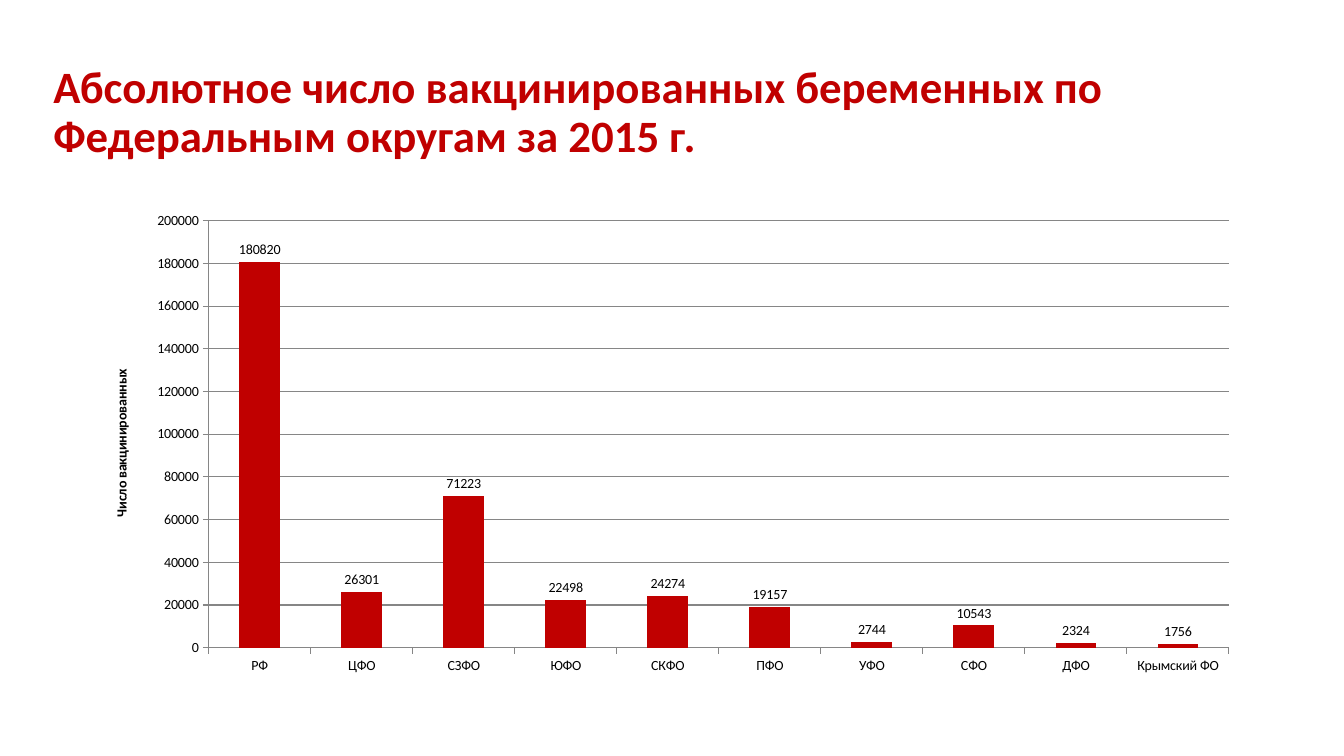
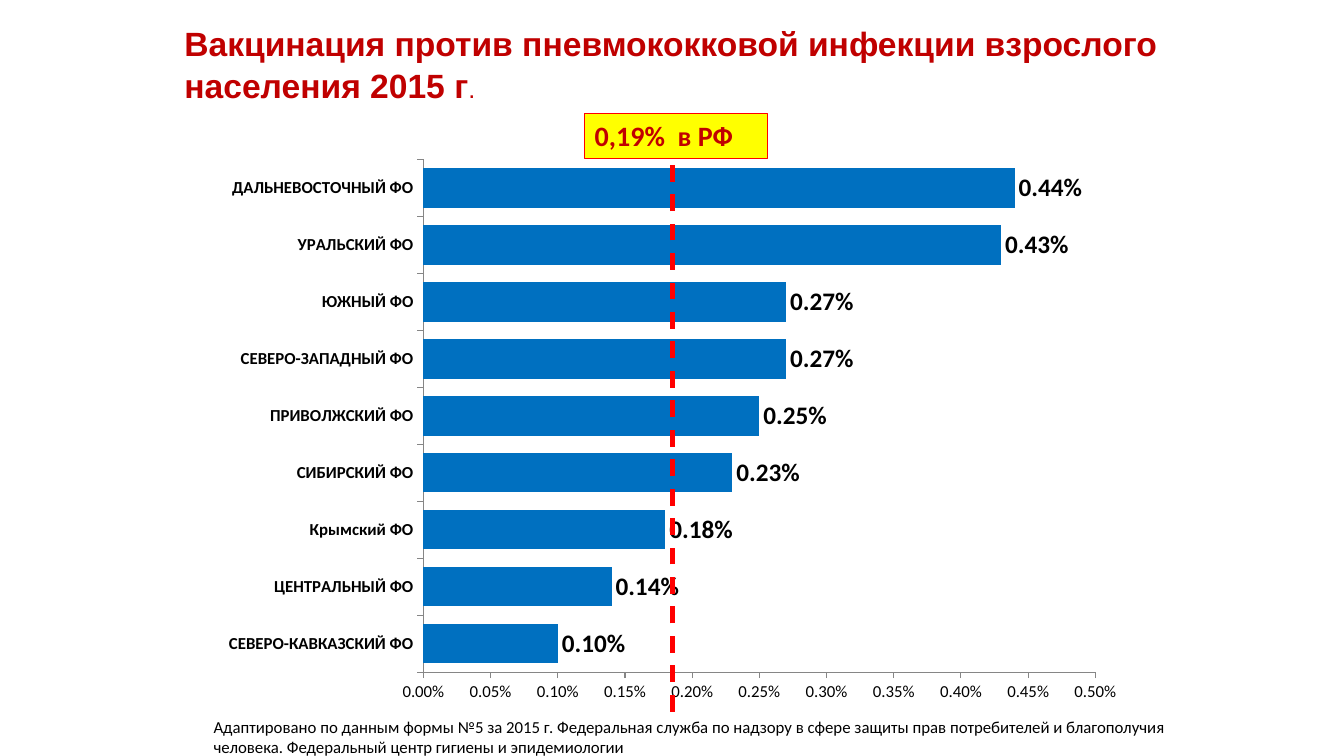
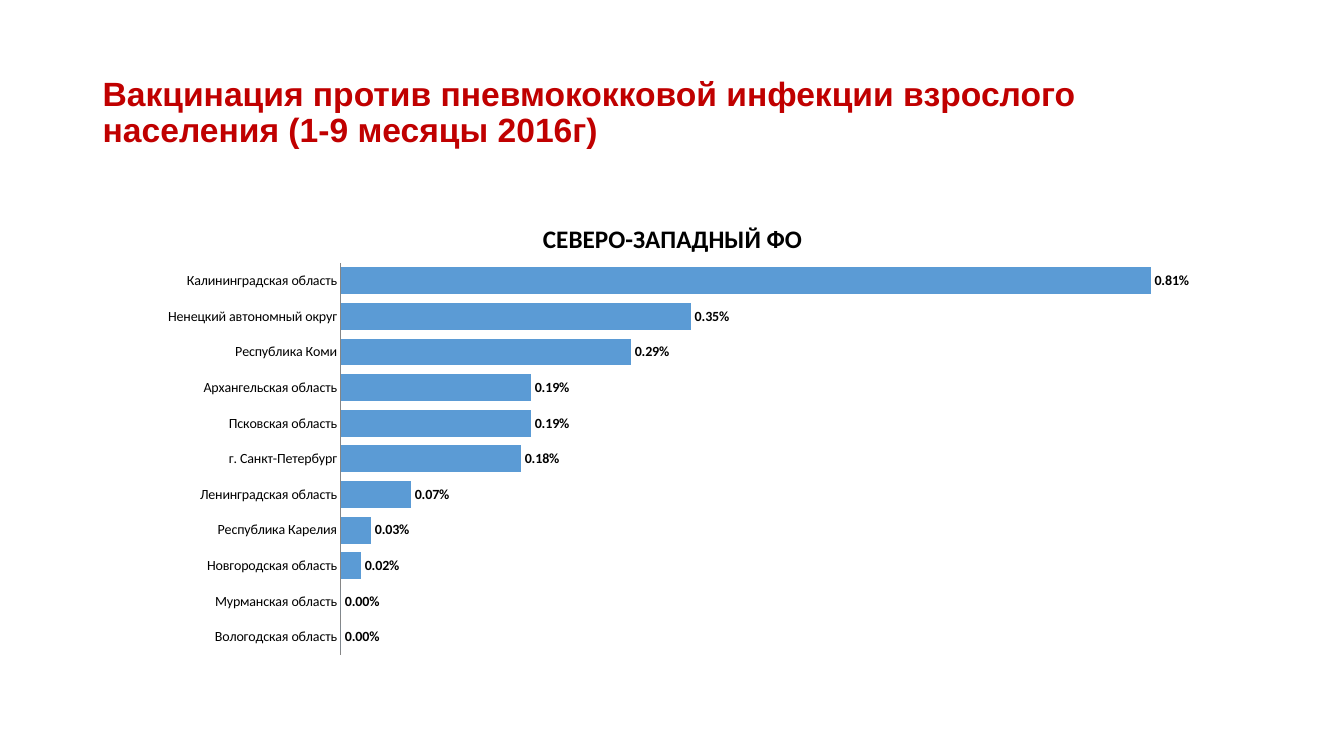
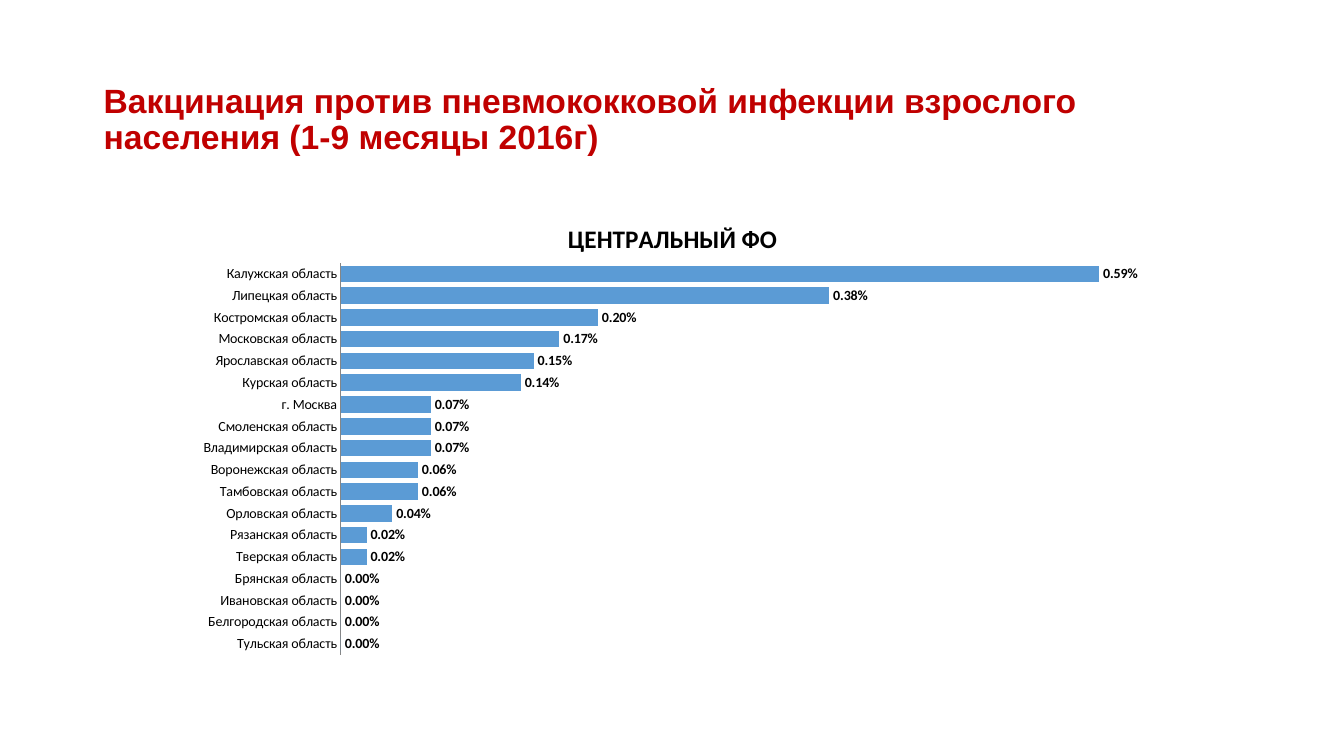
import dataclasses

import lxml.etree
import pptx
import pptx.chart.data
import pptx.dml.color
import pptx.enum.chart
import pptx.enum.dml
import pptx.enum.shapes
import pptx.enum.text
import pptx.oxml
import pptx.oxml.ns
import pptx.util

PX = 9144


@dataclasses.dataclass(frozen=True)
class Theme:
    red: str = "C00000"
    signal: str = "FF0000"
    yellow: str = "FFFF00"
    blue: str = "0070C0"
    sky: str = "5B9BD5"
    black: str = "000000"
    axis: str = "868686"
    body_font: str = "Calibri"
    title_font: str = "Arial"
    title_large: int = 32
    title_size: int = 24
    callout_size: int = 20
    heading_size: int = 18
    note_size: int = 12
    chart_size: int = 10


THEME = Theme()
PERCENT = "0.00%"


@dataclasses.dataclass(frozen=True)
class ChartStyle:
    color: str
    gap: int
    top_value: float
    step: float
    plot: tuple
    kind: object = pptx.enum.chart.XL_CHART_TYPE.BAR_CLUSTERED
    overlap: int = 0
    number_format: str = PERCENT
    size: int = THEME.chart_size
    label_size: int = THEME.chart_size
    bold_labels: bool = True
    bold_categories: bool = False
    show_values_axis: bool = True
    gridlines: bool = False
    title: str = ""
    axis_title: str = ""


def px(*lengths):
    return [pptx.util.Emu(length * PX) for length in lengths]


def rgb(color):
    return pptx.dml.color.RGBColor.from_string(color)


def set_font(font, size, color=THEME.black, name=THEME.body_font, bold=False):
    font.size = pptx.util.Pt(size)
    font.color.rgb = rgb(color)
    font.name = name
    font.bold = bold


def add_span(para, text, size, **style):
    span = para.add_run()
    span.text = text
    set_font(span.font, size, **style)


def add_text_box(page, area):
    box = page.shapes.add_textbox(*px(*area))
    box.text_frame.word_wrap = True
    return box


def add_title(page, area, text, size=THEME.title_size, font=THEME.title_font, spacing=0.9):
    box = add_text_box(page, area)
    box.text_frame.vertical_anchor = pptx.enum.text.MSO_ANCHOR.MIDDLE
    para = box.text_frame.paragraphs[0]
    para.line_spacing = spacing
    add_span(para, text, size, color=THEME.red, name=font, bold=True)
    return para


def add_note(page, area, text):
    box = add_text_box(page, area)
    add_span(box.text_frame.paragraphs[0], text, THEME.note_size)


def add_callout(page, area, text):
    box = page.shapes.add_shape(pptx.enum.shapes.MSO_SHAPE.RECTANGLE, *px(*area))
    box.shadow.inherit = False
    box.fill.solid()
    box.fill.fore_color.rgb = rgb(THEME.yellow)
    box.line.color.rgb = rgb(THEME.signal)
    box.line.width = pptx.util.Pt(0.75)
    box.text_frame.word_wrap = True
    box.text_frame.vertical_anchor = pptx.enum.text.MSO_ANCHOR.TOP
    para = box.text_frame.paragraphs[0]
    para.alignment = pptx.enum.text.PP_ALIGN.LEFT
    add_span(para, text, THEME.callout_size, color=THEME.red, bold=True)


def add_dashed_line(page, start, end):
    line = page.shapes.add_connector(
        pptx.enum.shapes.MSO_CONNECTOR.STRAIGHT, *px(*start, *end))
    line.line.color.rgb = rgb(THEME.signal)
    line.line.width = pptx.util.Pt(3)
    line.line.dash_style = pptx.enum.dml.MSO_LINE.DASH
    lxml.etree.SubElement(line.element.spPr, pptx.oxml.ns.qn("a:effectLst"))


def place_plot(chart, fractions):
    plot_area = chart.element.find(".//" + pptx.oxml.ns.qn("c:plotArea"))
    for old in plot_area.findall(pptx.oxml.ns.qn("c:layout")):
        plot_area.remove(old)
    layout = pptx.oxml.parse_xml(
        f'<c:layout {pptx.oxml.ns.nsdecls("c")}><c:manualLayout/></c:layout>')
    plot_area.insert(0, layout)
    settings = [("layoutTarget", "inner"), ("xMode", "edge"), ("yMode", "edge")]
    settings += zip("xywh", fractions)
    for tag, value in settings:
        item = lxml.etree.SubElement(layout[0], pptx.oxml.ns.qn(f"c:{tag}"))
        item.set("val", str(value))


def style_axes(chart, style):
    marks = pptx.enum.chart.XL_TICK_MARK
    values, categories = chart.value_axis, chart.category_axis
    values.minimum_scale = 0
    values.maximum_scale = style.top_value
    values.major_unit = style.step
    values.has_major_gridlines = style.gridlines
    values.visible = style.show_values_axis
    values.tick_labels.number_format = style.number_format
    values.tick_labels.number_format_is_linked = False
    for axis in (values, categories):
        axis.major_tick_mark = marks.OUTSIDE if style.show_values_axis else marks.NONE
        axis.minor_tick_mark = marks.NONE
        axis.format.line.color.rgb = rgb(THEME.axis)
        axis.format.line.width = pptx.util.Pt(0.75)
    if style.gridlines:
        values.major_gridlines.format.line.color.rgb = rgb(THEME.axis)
    set_font(categories.tick_labels.font, style.size, bold=style.bold_categories)
    if style.axis_title:
        para = values.axis_title.text_frame.paragraphs[0]
        add_span(para, style.axis_title, style.size, bold=True)


def add_chart(page, area, rows, style):
    data = pptx.chart.data.CategoryChartData(number_format=style.number_format)
    names, numbers = zip(*rows)
    data.categories = names
    data.add_series("Series 1", numbers)
    chart = page.shapes.add_chart(style.kind, *px(*area), data).chart
    set_font(chart.font, style.size)
    chart.has_legend = False
    chart.has_title = bool(style.title)
    if style.title:
        para = chart.chart_title.text_frame.paragraphs[0]
        add_span(para, style.title, THEME.heading_size, bold=True)
    style_axes(chart, style)
    plot = chart.plots[0]
    plot.vary_by_categories = False
    plot.gap_width = style.gap
    plot.overlap = style.overlap
    fill = plot.series[0].format.fill
    fill.solid()
    fill.fore_color.rgb = rgb(style.color)
    plot.has_data_labels = True
    labels = plot.data_labels
    labels.show_value = True
    labels.number_format = style.number_format
    labels.number_format_is_linked = False
    labels.position = pptx.enum.chart.XL_LABEL_POSITION.OUTSIDE_END
    set_font(labels.font, style.label_size, bold=style.bold_labels)
    place_plot(chart, style.plot)


CHART_AREA = (92, 200, 1150, 476)

PREGNANT = [
    ("РФ", 180820), ("ЦФО", 26301), ("СЗФО", 71223), ("ЮФО", 22498),
    ("СКФО", 24274), ("ПФО", 19157), ("УФО", 2744), ("СФО", 10543),
    ("ДФО", 2324), ("Крымский ФО", 1756),
]
DISTRICTS = [
    ("СЕВЕРО-КАВКАЗСКИЙ ФО", 0.001), ("ЦЕНТРАЛЬНЫЙ ФО", 0.0014),
    ("Крымский ФО", 0.0018), ("СИБИРСКИЙ ФО", 0.0023),
    ("ПРИВОЛЖСКИЙ ФО", 0.0025), ("СЕВЕРО-ЗАПАДНЫЙ ФО", 0.0027),
    ("ЮЖНЫЙ ФО", 0.0027), ("УРАЛЬСКИЙ ФО", 0.0043),
    ("ДАЛЬНЕВОСТОЧНЫЙ ФО", 0.0044),
]
NORTH_WEST = [
    ("Вологодская область", 0), ("Мурманская область", 0),
    ("Новгородская область", 0.0002), ("Республика Карелия", 0.0003),
    ("Ленинградская область", 0.0007), ("г. Санкт-Петербург", 0.0018),
    ("Псковская область", 0.0019), ("Архангельская область", 0.0019),
    ("Республика Коми", 0.0029), ("Ненецкий автономный округ", 0.0035),
    ("Калининградская область", 0.0081),
]
CENTRAL = [
    ("Тульская область", 0), ("Белгородская область", 0),
    ("Ивановская область", 0), ("Брянская область", 0),
    ("Тверская область", 0.0002), ("Рязанская область", 0.0002),
    ("Орловская область", 0.0004), ("Тамбовская область", 0.0006),
    ("Воронежская область", 0.0006), ("Владимирская область", 0.0007),
    ("Смоленская область", 0.0007), ("г. Москва", 0.0007),
    ("Курская область", 0.0014), ("Ярославская область", 0.0015),
    ("Московская область", 0.0017), ("Костромская область", 0.002),
    ("Липецкая область", 0.0038), ("Калужская область", 0.0059),
]


def build_pregnant(page):
    add_title(page, (43, 40, 1198, 145),
              "Абсолютное число вакцинированных беременных по Федеральным округам за 2015 г.",
              size=THEME.title_large, font=THEME.body_font)
    add_chart(page, CHART_AREA, PREGNANT, ChartStyle(
        color=THEME.red, gap=150, top_value=200000, step=20000,
        plot=(0.1, 0.04, 0.88, 0.89), number_format="General",
        kind=pptx.enum.chart.XL_CHART_TYPE.COLUMN_CLUSTERED,
        bold_labels=False, gridlines=True, axis_title="Число вакцинированных"))


def build_districts(page):
    para = add_title(page, (173, 0, 988, 125),
                     "Вакцинация против пневмококковой инфекции взрослого населения 2015 г",
                     spacing=pptx.util.Pt(30))
    add_span(para, ".", THEME.heading_size, color=THEME.red, name=THEME.title_font)
    add_chart(page, (210, 147, 913, 559), DISTRICTS, ChartStyle(
        color=THEME.blue, gap=44, top_value=0.005, step=0.0005,
        plot=(0.23, 0.02, 0.73, 0.91), size=THEME.note_size,
        label_size=THEME.heading_size, bold_categories=True))
    add_note(page, (202, 706, 976, 51),
             "Адаптировано по данным формы №5 за 2015 г. Федеральная служба по надзору "
             "в сфере защиты прав потребителей и благополучия человека. "
             "Федеральный центр гигиены и эпидемиологии")
    add_callout(page, (580, 113, 181, 44), "0,19%  в РФ")
    add_dashed_line(page, (667, 706), (667, 153))


def build_regions(page, title_area, heading, rows, top_value):
    add_title(page, title_area,
              "Вакцинация против пневмококковой инфекции взрослого населения (1-9 месяцы 2016г)")
    add_chart(page, CHART_AREA, rows, ChartStyle(
        color=THEME.sky, gap=32, overlap=-25, top_value=top_value, step=0.001,
        plot=(0.214, 0.128, 0.776, 0.817), show_values_axis=False, title=heading))


def main():
    deck = pptx.Presentation()
    deck.slide_width, deck.slide_height = px(1333, 750)
    pages = [deck.slides.add_slide(deck.slide_layouts[6]) for _ in range(4)]
    build_pregnant(pages[0])
    build_districts(pages[1])
    build_regions(pages[2], (92, 40, 1150, 145), "СЕВЕРО-ЗАПАДНЫЙ ФО", NORTH_WEST, 0.009)
    build_regions(pages[3], (93, 47, 1150, 145), "ЦЕНТРАЛЬНЫЙ ФО", CENTRAL, 0.007)
    deck.save("out.pptx")


if __name__ == "__main__":
    main()
